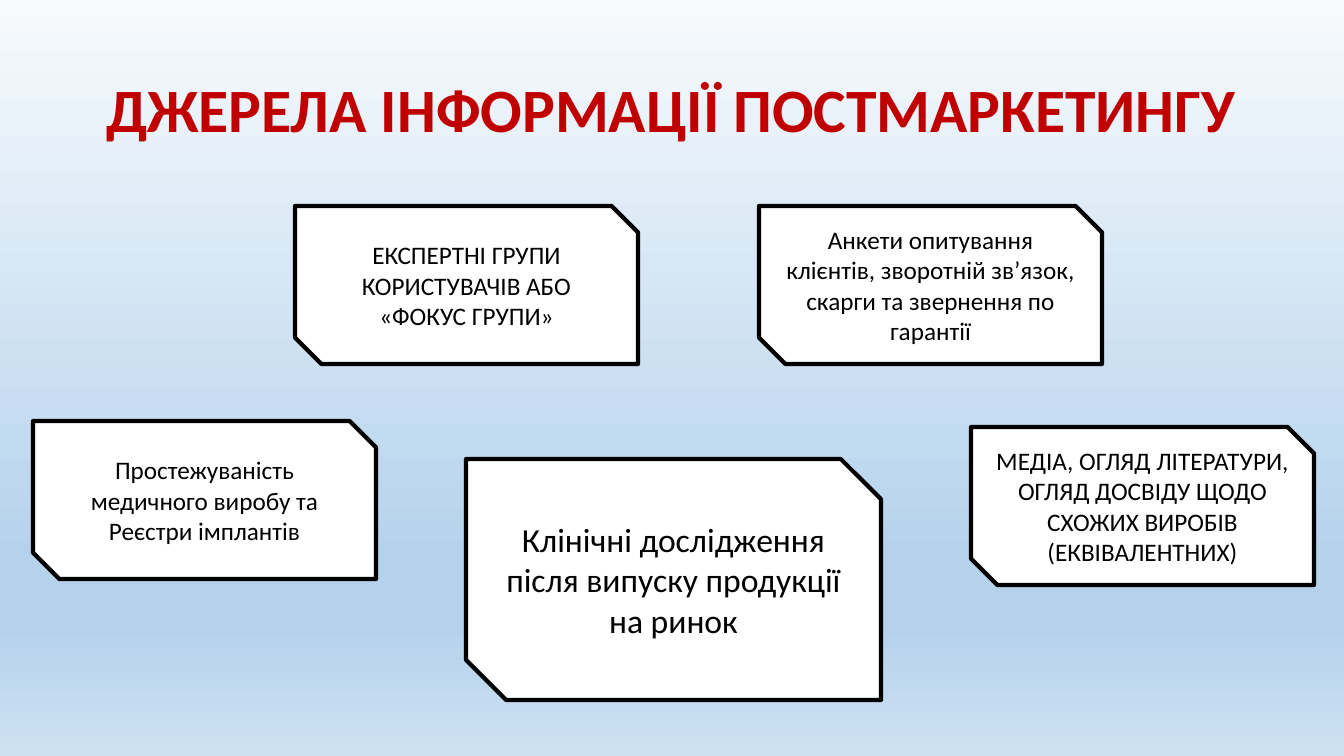
from copy import deepcopy

from pptx import Presentation
from pptx.dml.color import RGBColor
from pptx.enum.shapes import MSO_SHAPE
from pptx.enum.text import MSO_ANCHOR, PP_ALIGN
from pptx.oxml.ns import qn
from pptx.util import Emu, Pt

EMU_PER_PX = 914400 / 100.8
COLORS = {"title": "C00000", "ink": "000000", "card": "FFFFFF",
          "sky_top": "F7FAFD", "sky_deep": "B5D2EC", "sky_bottom": "CEE1F2"}
SKY_STOPS = [(0, "sky_top"), (0.74, "sky_deep"), (0.83, "sky_deep"), (1, "sky_bottom")]

SMALL_CARD = (343, 158)
LARGE_CARD = (415, 241)
# left, top, size of card, font size, text
SOURCES = [
    (295, 206, SMALL_CARD, 18, "ЕКСПЕРТНІ ГРУПИ КОРИСТУВАЧІВ АБО «ФОКУС ГРУПИ»"),
    (33, 421, SMALL_CARD, 18, "Простежуваність медичного виробу та Реєстри імплантів"),
    (759, 206, SMALL_CARD, 18,
     "Анкети опитування клієнтів, зворотній зв’язок, скарги та звернення по гарантії"),
    (971, 427, SMALL_CARD, 18,
     "МЕДІА, ОГЛЯД ЛІТЕРАТУРИ, ОГЛЯД ДОСВІДУ ЩОДО СХОЖИХ ВИРОБІВ (ЕКВІВАЛЕНТНИХ)"),
    (466, 459, LARGE_CARD, 24, "Клінічні дослідження після випуску продукції на ринок"),
]


def px(length):
    return Emu(round(length * EMU_PER_PX))


def color(name):
    return RGBColor.from_string(COLORS[name])


def write_text(shape, text, size, ink="ink", bold=False, line_spacing=1.0):
    frame = shape.text_frame
    frame.word_wrap = True
    frame.vertical_anchor = MSO_ANCHOR.MIDDLE
    paragraph = frame.paragraphs[0]
    paragraph.alignment = PP_ALIGN.CENTER
    paragraph.line_spacing = line_spacing
    run = paragraph.add_run()
    run.text = text
    run.font.name = "Calibri"
    run.font.size = Pt(size)
    run.font.bold = bold
    run.font.color.rgb = color(ink)


def paint_background(slide):
    fill = slide.background.fill
    fill.gradient()
    fill.gradient_angle = 270
    # A new gradient has two stops; extend it to the number needed
    stop_list = next(slide.element.iter(qn("a:gsLst")))
    while len(stop_list) < len(SKY_STOPS):
        stop_list.append(deepcopy(stop_list[0]))
    for stop, (position, name) in zip(fill.gradient_stops, SKY_STOPS):
        stop.position = position
        stop.color.rgb = color(name)


def add_title(slide, left, top, width, height):
    title = slide.shapes.add_textbox(px(left), px(top), px(width), px(height))
    write_text(title, "ДЖЕРЕЛА ІНФОРМАЦІЇ ПОСТМАРКЕТИНГУ", 44,
               ink="title", bold=True, line_spacing=0.9)


def add_source_card(slide, left, top, width, height, text, size):
    card = slide.shapes.add_shape(MSO_SHAPE.SNIP_2_DIAG_RECTANGLE,
                                  px(left), px(top), px(width), px(height))
    card.shadow.inherit = False
    card.fill.solid()
    card.fill.fore_color.rgb = color("card")
    card.line.color.rgb = color("ink")
    card.line.width = Pt(3)
    write_text(card, text, size)


def main():
    presentation = Presentation()
    presentation.slide_width, presentation.slide_height = px(1344), px(756)
    slide = presentation.slides.add_slide(presentation.slide_layouts[6])

    paint_background(slide)
    add_title(slide, 92, 40, 1159, 146)
    for left, top, (width, height), size, text in SOURCES:
        add_source_card(slide, left, top, width, height, text, size)

    presentation.save("out.pptx")


if __name__ == "__main__":
    main()
